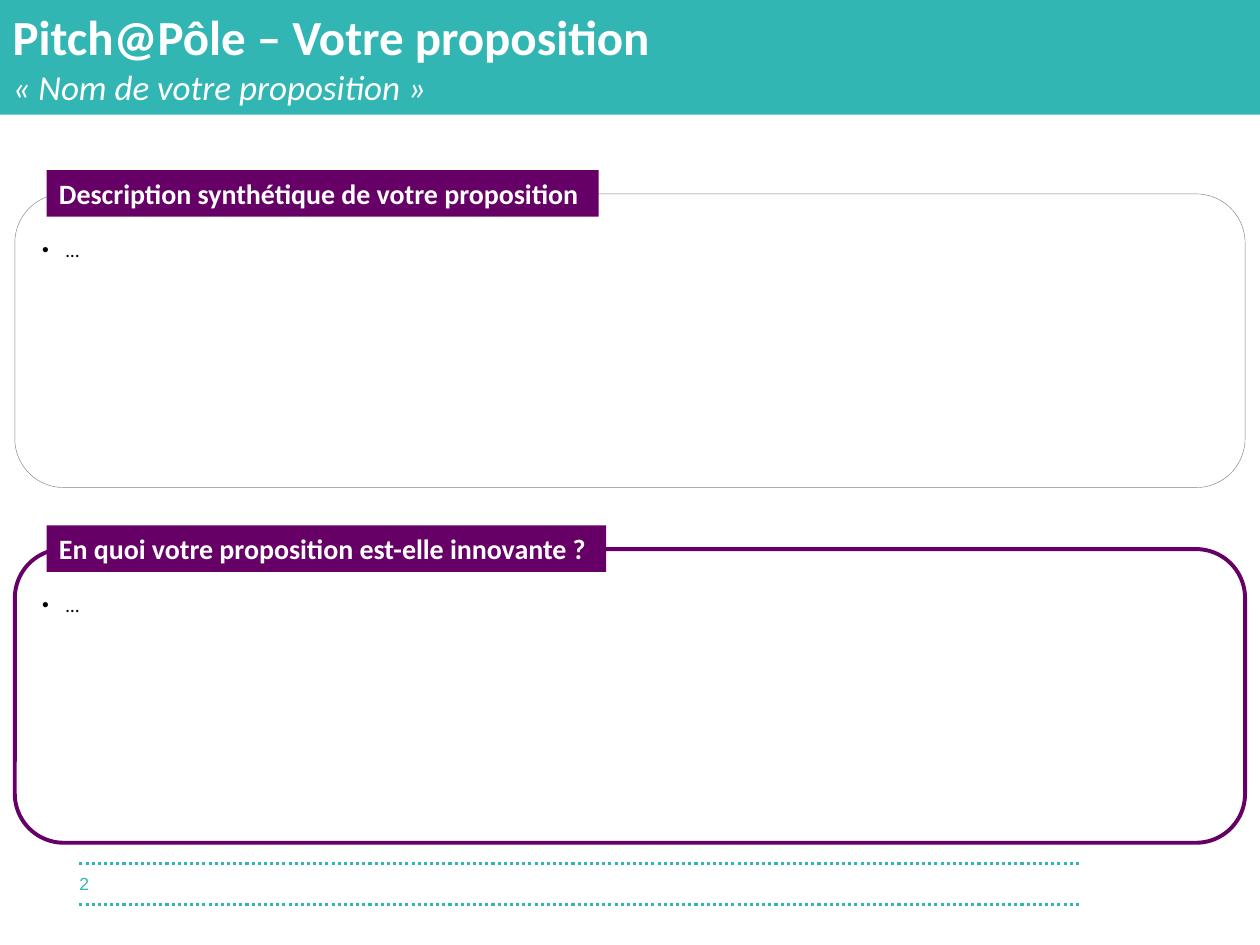
from dataclasses import dataclass

from lxml import etree
from pptx import Presentation
from pptx import util as u
from pptx.dml.color import RGBColor
from pptx.enum import dml, shapes, text
from pptx.oxml.ns import qn


@dataclass(frozen=True)
class Theme:
    teal: str = "31B6B3"
    purple: str = "660066"
    grey: str = "808080"
    white: str = "FFFFFF"
    black: str = "000000"
    heading_font: str = "Calibri"
    number_font: str = "Arial"
    title_size: int = 28
    subtitle_size: int = 20
    tag_size: int = 16
    list_size: int = 11
    number_size: int = 10


class SlideBuilder:
    def __init__(self, slide, theme):
        self.slide = slide
        self.theme = theme

    def place(self, shape, left, top, width, height):
        box = dict(left=left, top=top, width=width, height=height)
        for name, value in box.items():
            setattr(shape, name, u.Cm(value))

    def frame(self, shape, **values):
        for name, value in values.items():
            setattr(shape.text_frame, name, value)

    def no_margins(self, shape):
        self.frame(shape, **{f"margin_{side}": 0 for side in ("left", "top", "right", "bottom")})

    def add_words(self, paragraph, words, size, color, name=None, **values):
        paragraph.alignment = text.PP_ALIGN.LEFT
        paragraph.space_before = u.Pt(0)
        run = paragraph.add_run()
        run.text = words
        run.font.color.rgb = RGBColor.from_string(color)
        values.update(size=u.Pt(size), name=name or self.theme.heading_font)
        for key, value in values.items():
            setattr(run.font, key, value)

    def fill(self, shape, color):
        shape.fill.solid()
        shape.fill.fore_color.rgb = RGBColor.from_string(color)

    def banner(self, title, subtitle):
        shape = self.slide.shapes.title
        self.place(shape, 0, 0, 25.4, 2.31)
        self.fill(shape, self.theme.teal)
        self.frame(shape, word_wrap=True, auto_size=text.MSO_AUTO_SIZE.NONE,
                   vertical_anchor=text.MSO_ANCHOR.TOP)
        first = shape.text_frame.paragraphs[0]
        self.add_words(first, title, self.theme.title_size, self.theme.white, bold=True)
        second = shape.text_frame.add_paragraph()
        self.add_words(second, subtitle, self.theme.subtitle_size, self.theme.white, italic=True)

    def panel(self, top, color, weight):
        shape = self.slide.shapes.add_shape(
            shapes.MSO_SHAPE.ROUNDED_RECTANGLE, *map(u.Cm, (0.3, top, 24.8, 5.92)))
        shape.shadow.inherit = False
        shape.fill.background()
        shape.line.color.rgb = RGBColor.from_string(color)
        shape.line.width = u.Pt(weight)

    def tag(self, words, top, width):
        shape = self.slide.shapes.add_shape(
            shapes.MSO_SHAPE.RECTANGLE, *map(u.Cm, (0.94, top, width, 0.94)))
        shape.shadow.inherit = False
        self.fill(shape, self.theme.purple)
        shape.line.fill.background()
        self.frame(shape, word_wrap=False)
        self.add_words(shape.text_frame.paragraphs[0], words, self.theme.tag_size,
                       self.theme.white, bold=True)

    def bullet_list(self, index, items, top):
        shape = self.slide.placeholders[index]
        self.place(shape, 0.85, top, 23.7, 4.7)
        self.no_margins(shape)
        self.frame(shape, word_wrap=True, auto_size=text.MSO_AUTO_SIZE.NONE,
                   vertical_anchor=text.MSO_ANCHOR.TOP)
        for number, item in enumerate(items):
            body = shape.text_frame
            paragraph = body.add_paragraph() if number else body.paragraphs[0]
            properties = paragraph._p.get_or_add_pPr()
            indent = u.Cm(0.48)
            properties.set("marL", str(indent))
            properties.set("indent", str(-indent))
            etree.SubElement(properties, qn("a:buChar")).set("char", "•")
            self.add_words(paragraph, item, self.theme.list_size, self.theme.black)

    def dotted_line(self, y):
        line = self.slide.shapes.add_connector(
            shapes.MSO_CONNECTOR.STRAIGHT, *map(u.Cm, (1.6, y, 21.77, y)))
        line.line.color.rgb = RGBColor.from_string(self.theme.teal)
        line.line.width = u.Pt(1.75)
        line.line.dash_style = dml.MSO_LINE.ROUND_DOT
        etree.SubElement(line._element.spPr, qn("a:effectLst"))

    def page_number(self, number, top):
        shape = self.slide.shapes.add_textbox(*map(u.Cm, (1.6, top, 2.03, 0.84)))
        self.no_margins(shape)
        self.frame(shape, word_wrap=True, vertical_anchor=text.MSO_ANCHOR.MIDDLE)
        self.add_words(shape.text_frame.paragraphs[0], number, self.theme.number_size,
                       self.theme.teal, self.theme.number_font)


def main():
    presentation = Presentation()
    presentation.slide_width, presentation.slide_height = u.Cm(25.4), u.Cm(19.05)
    theme = Theme()
    slide = presentation.slides.add_slide(presentation.slide_layouts[3])
    builder = SlideBuilder(slide, theme)

    # Footer
    footer_top = 17.4
    for y in (footer_top + 0.84, footer_top):
        builder.dotted_line(y)
    builder.page_number("2", footer_top)

    # Title banner
    builder.banner("Pitch@Pôle – Votre proposition", "« Nom de votre proposition »")

    # Framed sections: heading, heading width, frame colour, frame weight
    sections = [
        ("Description synthétique de votre proposition", 11.13, theme.grey, 0.25),
        ("En quoi votre proposition est-elle innovante ?", 11.28, theme.purple, 2.25),
    ]
    for number, (heading, width, color, weight) in enumerate(sections):
        top = 3.43 + 7.16 * number
        builder.panel(top + 0.48, color, weight)
        builder.bullet_list(number + 1, ["…"], top + 1.37)
        builder.tag(heading, top, width)

    presentation.save("out.pptx")


if __name__ == "__main__":
    main()
